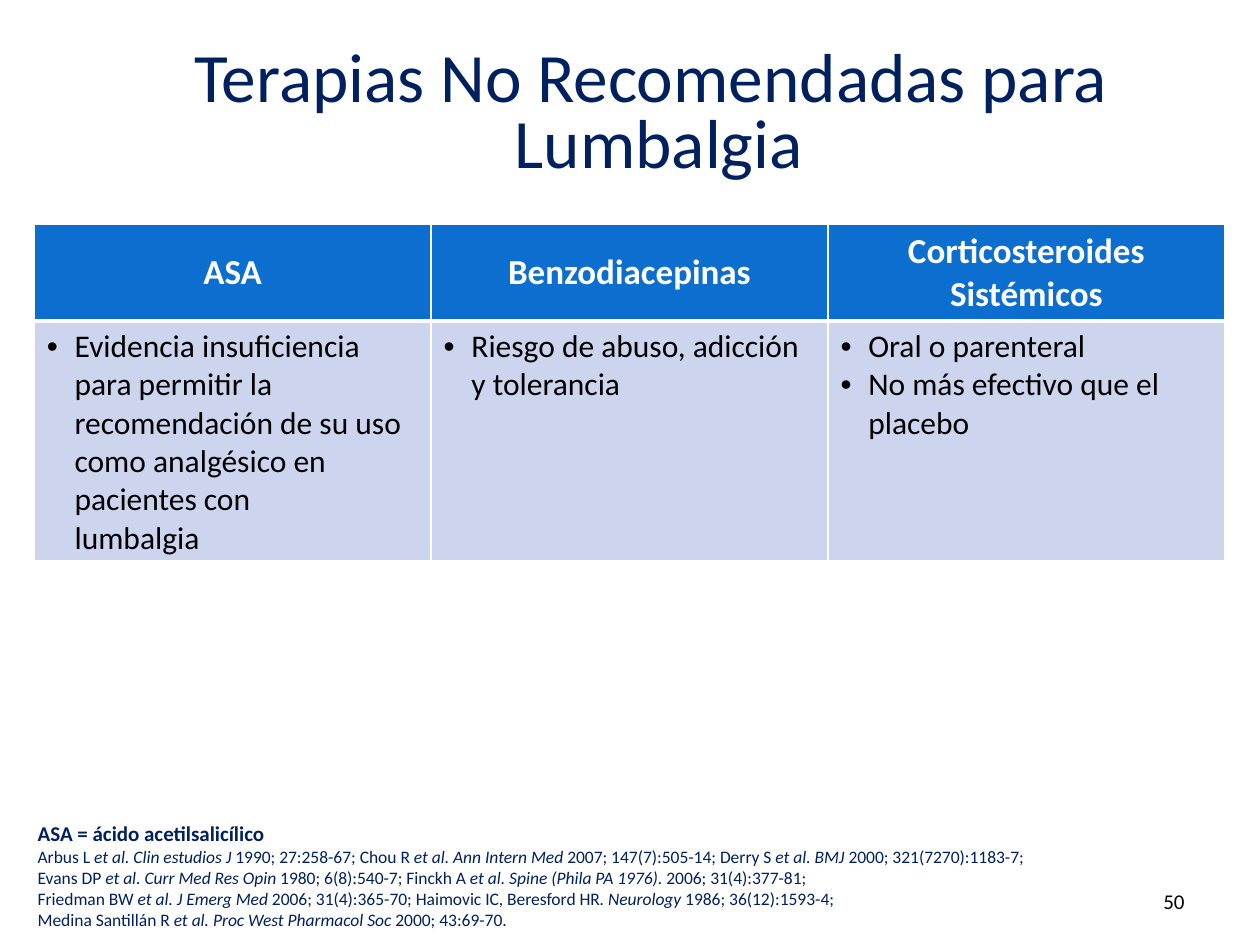
from lxml.etree import SubElement
from pptx import Presentation
from pptx.dml.color import RGBColor
from pptx.enum.text import MSO_ANCHOR as Anchor, MSO_AUTO_SIZE as AutoSize, PP_ALIGN as Align
from pptx.oxml.ns import qn
from pptx.util import Cm, Pt

NAVY = RGBColor(0x00, 0x20, 0x60)
BLUE = RGBColor(0x0C, 0x6F, 0xCF)
PALE_BLUE = RGBColor(0xCC, 0xD5, 0xED)
WHITE = RGBColor(0xFF, 0xFF, 0xFF)
BLACK = RGBColor(0x00, 0x00, 0x00)
FONT = "Calibri"

TITLE = "Terapias No Recomendadas para \vLumbalgia"
THERAPIES = [
    ("ASA", ["Evidencia insuficiencia para permitir la recomendación de su uso "
             "como analgésico en pacientes con \vlumbalgia"]),
    ("Benzodiacepinas", ["Riesgo de abuso, adicción y tolerancia"]),
    ("Corticosteroides Sistémicos", ["Oral o parenteral", "No más efectivo que el placebo"]),
]
ABBREVIATION = "ASA = ácido acetilsalicílico"
# Text between asterisks is italic
REFERENCES = [
    "Arbus L *et al. Clin estudios J *1990; 27:258-67; Chou R *et al. Ann Intern Med *"
    "2007; 147(7):505-14; Derry S *et al. BMJ *2000; 321(7270):1183-7;",
    "Evans DP *et al. Curr Med Res Opin* 1980; 6(8):540-7; Finckh A "
    "*et al. Spine (Phila PA 1976). *2006; 31(4):377-81;",
    "Friedman BW *et al. J Emerg Med* 2006; 31(4):365-70; Haimovic IC, Beresford HR"
    "*. Neurology *1986; 36(12):1593-4;",
    "Medina Santillán R *et al. Proc West Pharmacol Soc* 2000; 43:69-70.",
]
PAGE_NUMBER = "50"

COLUMN_WIDTH = Cm(8)
HEADER_HEIGHT, BODY_HEIGHT = Cm(1.94), Cm(4.83)
BULLET_INDENT = Cm(0.56)


def set_font(paragraph, size, color, bold=False):
    font = paragraph.font
    font.name, font.size, font.bold = FONT, Pt(size), bold
    font.color.rgb = color


def add_bullet(paragraph):
    props = paragraph._p.get_or_add_pPr()
    props.set("marL", str(BULLET_INDENT))
    props.set("indent", str(-BULLET_INDENT))
    SubElement(props, qn("a:buFont"), typeface="Arial")
    SubElement(props, qn("a:buChar"), char="•")


def style_cell(cell, color, bottom_width):
    props = cell._tc.get_or_add_tcPr()
    for side, width in (("L", 1), ("R", 1), ("T", 1), ("B", bottom_width)):
        line = SubElement(props, qn(f"a:ln{side}"), w=str(Pt(width)))
        SubElement(SubElement(line, qn("a:solidFill")), qn("a:srgbClr"), val=str(WHITE))
    cell.fill.solid()
    cell.fill.fore_color.rgb = color


def add_title(slide):
    title = slide.shapes.title
    title.left, title.top, title.width, title.height = Cm(1.85), Cm(0.74), Cm(22.86), Cm(3.18)
    frame = title.text_frame
    frame.text = TITLE
    frame.auto_size = AutoSize.NONE
    frame.vertical_anchor = Anchor.MIDDLE
    paragraph = frame.paragraphs[0]
    paragraph.alignment = Align.CENTER
    paragraph.line_spacing = 0.8
    set_font(paragraph, 39.6, NAVY)


def add_therapies(slide):
    count = len(THERAPIES)
    table = slide.shapes.add_table(2, count, Cm(0.69), Cm(4.52), COLUMN_WIDTH * count,
                                   HEADER_HEIGHT + BODY_HEIGHT).table
    table.rows[0].height, table.rows[1].height = HEADER_HEIGHT, BODY_HEIGHT
    for index, (therapy, reasons) in enumerate(THERAPIES):
        table.columns[index].width = COLUMN_WIDTH
        header, body = table.cell(0, index), table.cell(1, index)
        style_cell(header, BLUE, 3)
        header.text = therapy
        header.vertical_anchor = Anchor.MIDDLE
        heading = header.text_frame.paragraphs[0]
        heading.alignment = Align.CENTER
        set_font(heading, 20, WHITE, bold=True)

        style_cell(body, PALE_BLUE, 1)
        body.text = "\n".join(reasons)
        for reason in body.text_frame.paragraphs:
            add_bullet(reason)
            set_font(reason, 18, BLACK)


def add_references(slide):
    frame = slide.shapes.add_textbox(Cm(0.51), Cm(16.51), Cm(24), Cm(2.24)).text_frame
    frame.word_wrap = True
    frame.vertical_anchor = Anchor.BOTTOM
    frame.margin_left = Cm(0.25)
    frame.margin_top = frame.margin_right = frame.margin_bottom = 0
    abbreviation = frame.paragraphs[0]
    abbreviation.text = ABBREVIATION
    set_font(abbreviation, 12, NAVY, bold=True)
    for reference in REFERENCES:
        paragraph = frame.add_paragraph()
        set_font(paragraph, 10, NAVY)
        for index, part in enumerate(reference.split("*")):
            run = paragraph.add_run()
            run.text = part
            run.font.italic = index % 2 == 1


def add_page_number(slide):
    frame = slide.shapes.add_textbox(Cm(18.21), Cm(17.65), Cm(5.92), Cm(1.02)).text_frame
    frame.word_wrap = True
    frame.vertical_anchor = Anchor.MIDDLE
    number = frame.paragraphs[0]
    number.text = PAGE_NUMBER
    number.alignment = Align.RIGHT
    set_font(number, 12, BLACK)


def main():
    deck = Presentation()
    deck.slide_width, deck.slide_height = Cm(25.4), Cm(19.05)
    slide = deck.slides.add_slide(deck.slide_layouts[5])
    add_title(slide)
    add_references(slide)
    add_page_number(slide)
    add_therapies(slide)
    deck.save("out.pptx")


if __name__ == "__main__":
    main()
